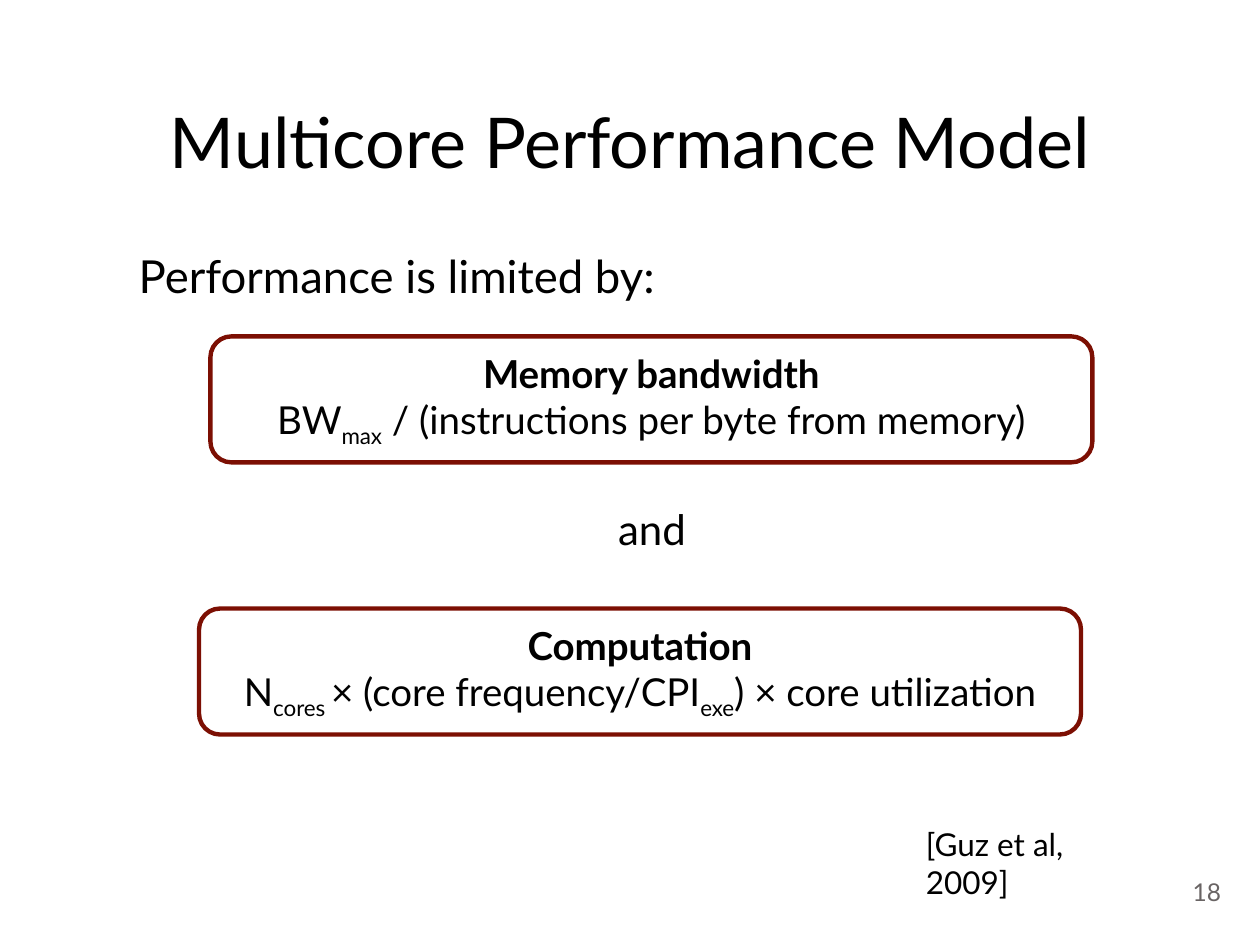
from pptx import Presentation
from pptx.dml.color import RGBColor
from pptx.enum.shapes import MSO_SHAPE as Preset
from pptx.enum.text import MSO_ANCHOR as Anchor, MSO_AUTO_SIZE as Fit, PP_ALIGN as Align
from pptx.util import Inches, Pt
from lxml.etree import SubElement
from pptx.oxml.ns import qn

TITLE = "Multicore Performance Model"
INTRO, JOINER = "Performance is limited by:", "and"
CITATION, PAGE = "[Guz et al, 2009]", "18"
LIMITS = [
    ((1.67, 2.67), "Memory bandwidth",
     [("BW", False), ("max", True), (" / (instructions per byte from memory)", False)]),
    ((1.58, 4.83), "Computation",
     [("N", False), ("cores ", True), ("× (core frequency/CPI", False),
      ("exe", True), (") × core utilization", False)]),
]
LIMIT_SIZE = (7, 1)
BLACK, GREY, MAROON = "000000", "696464", "7C0F03"


def color(hex_code):
    """Turn a hex string into a colour."""
    return RGBColor.from_string(hex_code)


def place(shape, *box):
    """Move a shape to left, top, width, height in inches."""
    for side, value in zip(("left", "top", "width", "height"), box):
        setattr(shape, side, Inches(value))


def add_run(paragraph, text, size, ink=BLACK, bold=False, subscript=False):
    """Append one formatted run to a paragraph."""
    run = paragraph.add_run()
    run.text = text
    for key, value in {"name": "Lato", "size": Pt(size), "bold": bold}.items():
        setattr(run.font, key, value)
    run.font.color.rgb = color(ink)
    if subscript:
        run.font._element.set("baseline", "-25000")


def set_frame(frame, **values):
    """Apply format values to a text frame."""
    for key, value in values.items():
        setattr(frame, key, value)


def hang(paragraph, left, first):
    """Give a paragraph a hanging indent without a bullet."""
    props = paragraph._p.get_or_add_pPr()
    props.set("marL", str(Inches(left)))
    props.set("indent", str(Inches(first)))
    SubElement(props, qn("a:buNone"))


def add_outline(slide, preset, box):
    """Add an unfilled preset shape."""
    shape = slide.shapes.add_shape(preset, *map(Inches, box))
    shape.shadow.inherit = False
    shape.fill.background()
    return shape


def add_limit(slide, corner, heading, formula):
    """Add a rounded box with a heading and its formula."""
    limit = add_outline(slide, Preset.ROUNDED_RECTANGLE, corner + LIMIT_SIZE)
    limit.line.color.rgb = color(MAROON)
    limit.line.width = Pt(2.5)
    frame = limit.text_frame
    set_frame(frame, word_wrap=True, vertical_anchor=Anchor.MIDDLE)
    top, bottom = frame.paragraphs[0], frame.add_paragraph()
    top.alignment = bottom.alignment = Align.CENTER
    add_run(top, heading, 22, bold=True)
    for text, subscript in formula:
        add_run(bottom, text, 22, subscript=subscript)


def main():
    """Build the slide."""
    deck = Presentation()
    deck.slide_width, deck.slide_height = Inches(10), Inches(7.5)
    slide = deck.slides.add_slide(deck.slide_layouts[1])
    title, body = slide.placeholders

    place(title, 0.75, 0.3, 8.5, 1.25)
    set_frame(title.text_frame, vertical_anchor=Anchor.BOTTOM, auto_size=Fit.NONE,
              margin_bottom=Inches(0.1))
    title.text_frame.paragraphs[0].alignment = Align.CENTER
    add_run(title.text_frame.paragraphs[0], TITLE, 40)

    number = add_outline(slide, Preset.OVAL, (9.33, 6.83, 0.5, 0.5))
    number.line.fill.background()
    set_frame(number.text_frame, word_wrap=False, vertical_anchor=Anchor.MIDDLE,
              margin_left=0, margin_right=0, margin_top=0, margin_bottom=0)
    number.text_frame.paragraphs[0].alignment = Align.CENTER
    add_run(number.text_frame.paragraphs[0], PAGE, 14, GREY)

    place(body, 1, 1.92, 8, 5)
    set_frame(body.text_frame, auto_size=Fit.NONE, vertical_anchor=Anchor.TOP)
    intro, joiner = body.text_frame.paragraphs[0], body.text_frame.add_paragraph()
    intro.space_before = Pt(0)
    hang(intro, 0.3, -0.3)
    add_run(intro, INTRO, 26)
    joiner.level, joiner.alignment, joiner.space_before = 1, Align.CENTER, Pt(114.5)
    hang(joiner, 0.6, -0.25)
    add_run(joiner, JOINER, 24)

    for limit in LIMITS:
        add_limit(slide, *limit)

    citation = slide.shapes.add_textbox(*map(Inches, (7.25, 6.5, 2, 0.4)))
    set_frame(citation.text_frame, word_wrap=True, auto_size=Fit.SHAPE_TO_FIT_TEXT)
    add_run(citation.text_frame.paragraphs[0], CITATION, 18)

    deck.save("out.pptx")


if __name__ == "__main__":
    main()
